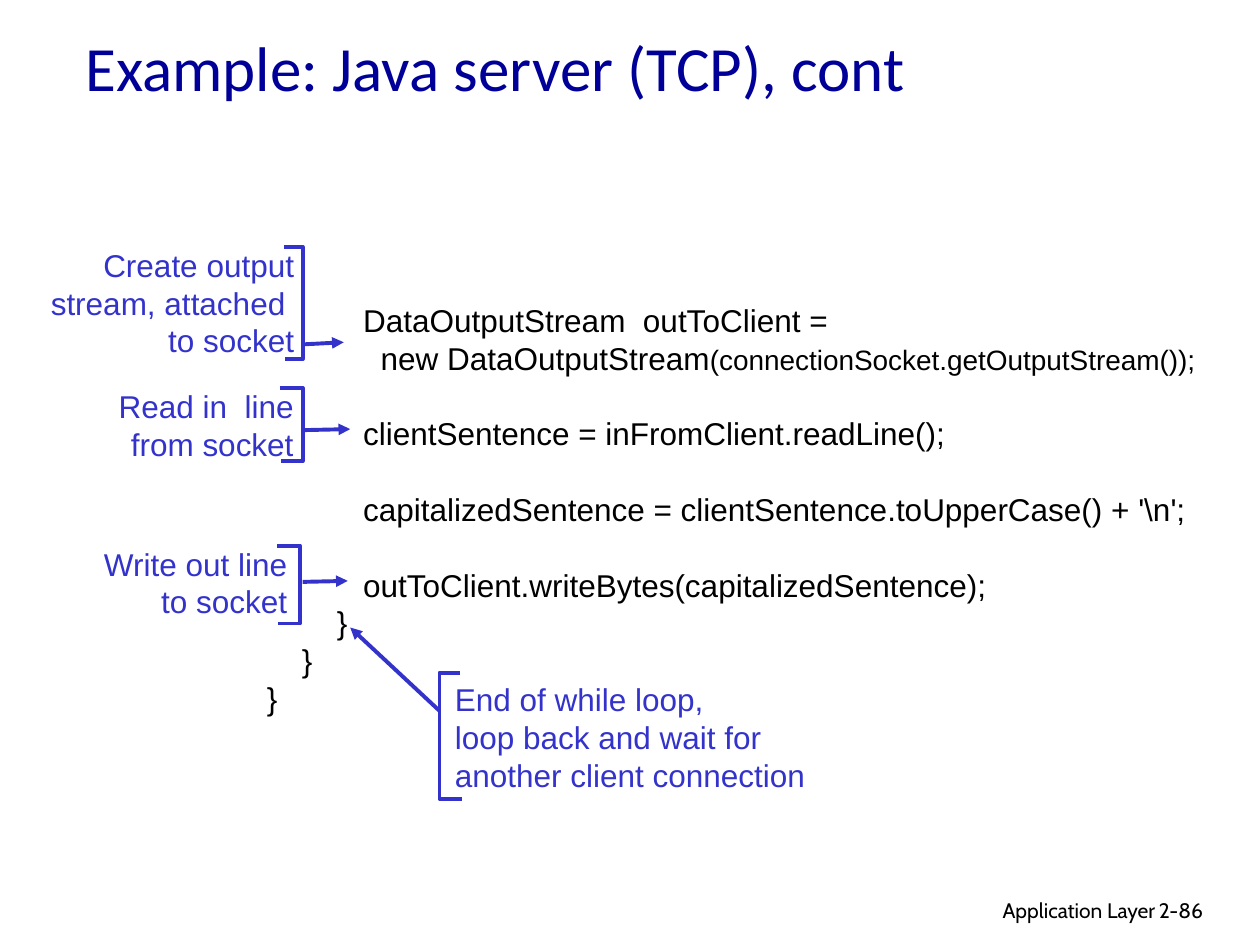
import lxml.etree
import pptx
import pptx.dml.color
import pptx.enum.text
import pptx.oxml.ns
import pptx.util

Cm, Pt = pptx.util.Cm, pptx.util.Pt
Align = pptx.enum.text.PP_ALIGN
Anchor = pptx.enum.text.MSO_ANCHOR
qn = pptx.oxml.ns.qn

NAVY, BLUE, BLACK = "000099", "3333CC", "000000"
LEAD = 21.6  # line pitch in points
SPACE = 5    # width of one code column in points


def color(code):
    return pptx.dml.color.RGBColor.from_string(code)


class Deck:
    def __init__(self):
        self.prs = pptx.Presentation()
        self.prs.slide_width, self.prs.slide_height = Cm(25.4), Cm(19.05)
        self.slide = self.prs.slides.add_slide(self.prs.slide_layouts[5])
        self.shapes = self.slide.shapes

    def run(self, para, text, size, font, ink):
        run = para.add_run()
        run.text = text
        for name, value in {"size": Pt(size), "name": font}.items():
            setattr(run.font, name, value)
        run.font.color.rgb = color(ink)

    def title(self, text, box):
        shape = self.shapes.title
        for name, value in zip(("left", "top", "width", "height"), box):
            setattr(shape, name, Cm(value))
        frame = shape.text_frame
        frame.vertical_anchor = Anchor.MIDDLE
        para = frame.paragraphs[0]
        para.alignment = Align.LEFT
        self.run(para, text, 36, "Calibri", NAVY)

    def frame(self, box, anchor=Anchor.TOP):
        frame = self.shapes.add_textbox(*map(Cm, box)).text_frame
        for name, value in {"word_wrap": True, "vertical_anchor": anchor}.items():
            setattr(frame, name, value)
        return frame

    def paras(self, frame, count):
        for _ in range(count - 1):
            frame.add_paragraph()
        return frame.paragraphs

    def note(self, box, lines, align):
        frame = self.frame(box, Anchor.MIDDLE)
        for para, line in zip(self.paras(frame, len(lines)), lines):
            para.alignment = align
            para.line_spacing = Pt(LEAD)
            self.run(para, line, 18, "Arial", BLUE)

    def code(self, box, inset, lines):
        frame = self.frame(box)
        frame.margin_top = Cm(inset)
        for para, (cols, gap, parts) in zip(self.paras(frame, len(lines)), lines):
            para.line_spacing = Pt(LEAD)
            para.space_before = Pt(LEAD * gap)
            para._p.get_or_add_pPr().set("marL", str(Pt(cols * SPACE)))
            for text, size in parts:
                self.run(para, text, size, "Arial", BLACK)

    def label(self, box, text, align):
        para = self.frame(box).paragraphs[0]
        para.alignment = align
        self.run(para, text, 12, "Cabin", BLACK)

    def stroke(self, line):
        line.color.rgb = color(BLUE)
        line.width = Pt(2.25)

    def brace(self, upper, spine, lower, top, bottom):
        pen = self.shapes.build_freeform(Cm(upper), Cm(top))
        points = [(spine, top), (spine, bottom), (lower, bottom)]
        pen.add_line_segments([(Cm(x), Cm(y)) for x, y in points], close=False)
        shape = pen.convert_to_shape()
        shape.shadow.inherit = False
        shape.fill.background()
        self.stroke(shape.line)

    def arrow(self, *ends):
        link = self.shapes.add_connector(1, *map(Cm, ends))
        self.stroke(link.line)
        props = link._element.spPr
        lxml.etree.SubElement(props.find(qn("a:ln")), qn("a:tailEnd"), type="triangle")
        lxml.etree.SubElement(props, qn("a:effectLst"))


def main():
    deck = Deck()
    deck.title("Example: Java server (TCP), cont", (1.47, -0.25, 21.59, 3.18))

    # Code: indent in columns, blank lines above, runs with sizes
    deck.code((5.13, 4.5, 19.43, 11.02), 1.57, [
        (11, 0, [("DataOutputStream  outToClient =", 18)]),
        (13, 0, [("new DataOutputStream", 18),
                 ("(connectionSocket.getOutputStream());", 16)]),
        (11, 1, [("clientSentence = inFromClient.readLine();", 18)]),
        (11, 1, [("capitalizedSentence = clientSentence.toUpperCase() + '\\n';", 18)]),
        (11, 1, [("outToClient.writeBytes(capitalizedSentence);", 18)]),
        (8, 0, [("}", 18)]),
        (4, 0, [("}", 18)]),
        (0, 0, [("}", 18)]),
    ])

    # Notes: text box, lines, alignment, bracket, arrow
    notes = [
        ((2.06, 7.67, 4.11, 1.78), ["Read in  line", "from socket"], Align.RIGHT,
         (5.64, 6.1, 5.66, 7.82, 9.3), (6.15, 8.67, 7.06, 8.65)),
        ((0.36, 4.83, 5.82, 2.54),
         ["Create output", "stream, attached ", "to socket"], Align.RIGHT,
         (5.72, 6.1, 5.74, 4.98, 7.24), (6.15, 6.94, 6.93, 6.9)),
        ((1.37, 10.85, 4.67, 1.78), ["Write out line", "to socket"], Align.RIGHT,
         (5.59, 6.05, 5.61, 11, 12.57), (6.1, 11.73, 7.01, 11.71)),
        ((8.92, 13.59, 8, 2.54),
         ["End of while loop,", "loop back and wait for",
          "another client connection"], Align.LEFT,
         (9.27, 8.86, 9.32, 13.56, 16.1), (8.86, 14.33, 7.06, 12.65)),
    ]
    for box, lines, align, brace, arrow in notes:
        deck.note(box, lines, align)
        deck.brace(*brace)
        deck.arrow(*arrow)

    # Footer
    deck.label((15.49, 17.96, 8.05, 0.79), "Application Layer", Align.RIGHT)
    deck.label((23.11, 17.96, 1.88, 0.76), "2-86", Align.LEFT)

    deck.prs.save("out.pptx")


if __name__ == "__main__":
    main()
